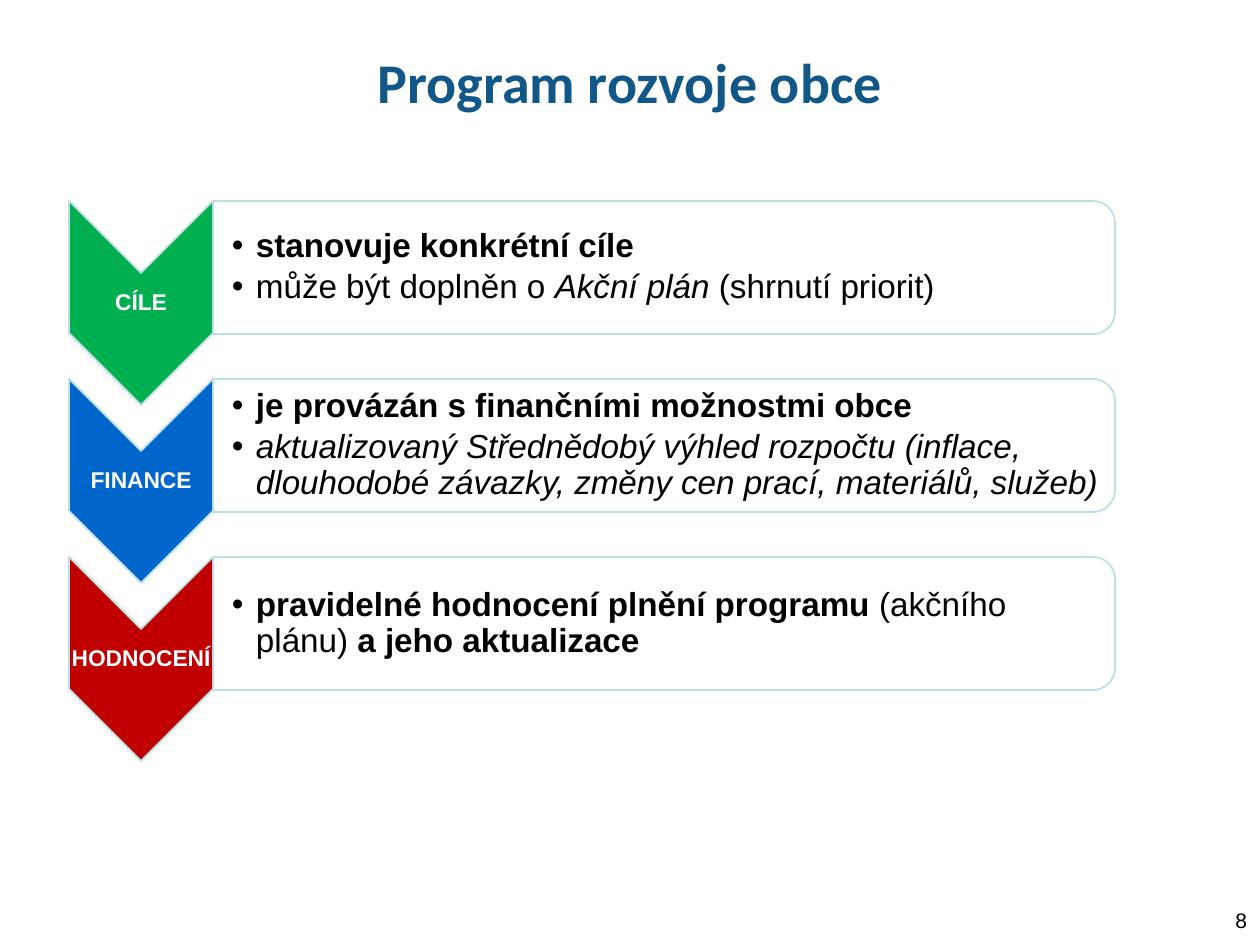
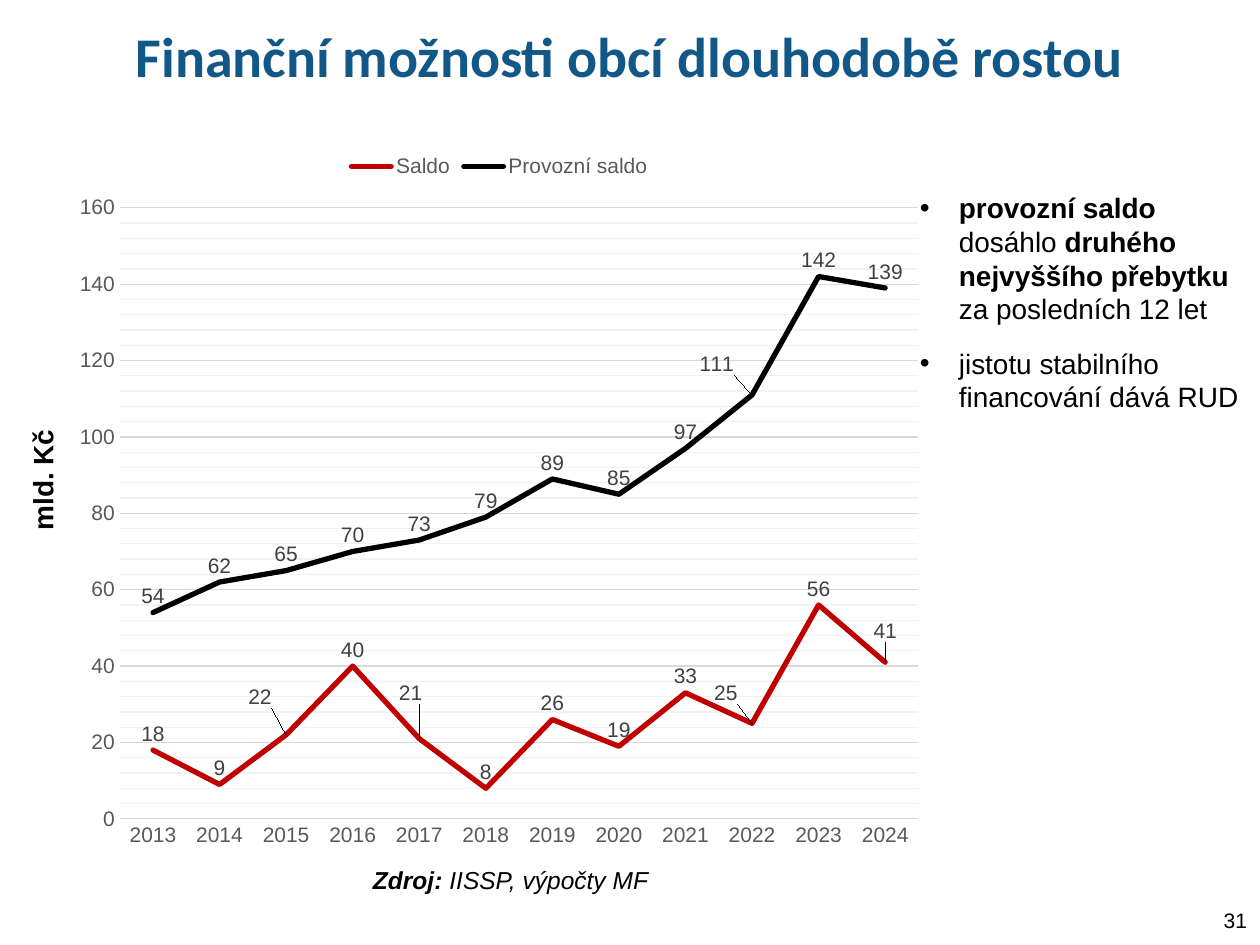
from lxml import etree
from pptx import Presentation
from pptx.chart.data import CategoryChartData
from pptx.dml.color import RGBColor
from pptx.enum.chart import XL_CHART_TYPE, XL_LABEL_POSITION, XL_LEGEND_POSITION, XL_TICK_MARK
from pptx.enum.shapes import MSO_SHAPE
from pptx.enum.text import MSO_ANCHOR, PP_ALIGN
from pptx.oxml.ns import qn
from pptx.util import Pt

EMU_PER_PX = 914400 / 126
SLIDE_WIDTH, SLIDE_HEIGHT = 1260, 945
TITLE_COLOR = "115888"
TEXT_COLOR = "000000"
WHITE = "FFFFFF"
OUTLINE = "BBE0E3"
GRID = "D9D9D9"
MINOR_GRID = "F2F2F2"
AXIS_TEXT = "595959"
LABEL_TEXT = "404040"
RED = "C00000"
BODY_FONT = "Arial"
TITLE_FONT = "Calibri"
DEFAULT_INSETS = (13, 6, 13, 6)
CHEVRON_WIDTH, CHEVRON_HEIGHT = 144, 204
ROW_HEIGHT, ROW_PITCH = 133, 178

PROGRAM_ROWS = [
    ("CÍLE", "00B050", [
        [("stanovuje konkrétní cíle", "b")],
        [("může být doplněn o ", ""), ("Akční plán ", "i"), ("(shrnutí priorit)", "")],
    ]),
    ("FINANCE", "0066CC", [
        [("je provázán s finančními možnostmi obce", "b")],
        [("aktualizovaný Střednědobý výhled rozpočtu (inflace, dlouhodobé závazky, "
          "změny cen prací, materiálů, služeb)", "i")],
    ]),
    ("HODNOCENÍ", RED, [
        [("pravidelné hodnocení plnění programu ", "b"), ("(akčního plánu) ", ""),
         ("a jeho aktualizace", "b")],
    ]),
]
BALANCE_NOTES = [
    [("provozní saldo ", "b"), ("dosáhlo ", ""), ("druhého nejvyššího přebytku", "b"),
     (" za posledních 12 let", "")],
    [("jistotu stabilního financování dává RUD", "")],
]
YEARS = [str(year) for year in range(2013, 2025)]
BALANCES = [
    ("Saldo", RED, [18, 9, 22, 40, 21, 8, 26, 19, 33, 25, 56, 41],
     {2: (-0.03, -0.03), 4: (-0.01, -0.04), 9: (-0.03, -0.02), 11: (0, -0.02)}),
    ("Provozní saldo", TEXT_COLOR, [54, 62, 65, 70, 73, 79, 89, 85, 97, 111, 142, 139],
     {9: (-0.04, -0.02)}),
]


def px(length):
    """Turn px into EMU."""
    return round(length * EMU_PER_PX)


def color(value):
    """Turn a hex string into a colour."""
    return RGBColor.from_string(value)


def set_font(font, size, value, name=BODY_FONT):
    """Set the face, size and colour of a font."""
    font.name = name
    font.size = Pt(size)
    font.color.rgb = color(value)


def add_bullet(paragraph, indent):
    """Give a paragraph a hanging round bullet."""
    properties = paragraph._p.get_or_add_pPr()
    properties.set("marL", str(px(indent)))
    properties.set("indent", str(-px(indent)))
    etree.SubElement(properties, qn("a:buFont")).set("typeface", BODY_FONT)
    etree.SubElement(properties, qn("a:buChar")).set("char", "•")


def add_text(slide, box, paragraphs, size, value=TEXT_COLOR, name=BODY_FONT,
             align=PP_ALIGN.LEFT, anchor=MSO_ANCHOR.TOP, insets=DEFAULT_INSETS,
             indent=0, spacing=1.0, after=0):
    """Add a text box whose paragraphs are lists of (text, style) runs."""
    shape = slide.shapes.add_textbox(*map(px, box))
    frame = shape.text_frame
    frame.word_wrap = True
    frame.vertical_anchor = anchor
    frame.margin_left, frame.margin_top, frame.margin_right, frame.margin_bottom = map(px, insets)
    for index, runs in enumerate(paragraphs):
        paragraph = frame.add_paragraph() if index else frame.paragraphs[0]
        if indent:
            add_bullet(paragraph, indent)
        paragraph.alignment = align
        paragraph.line_spacing = spacing
        paragraph.space_after = Pt(after)
        for text, style in runs:
            run = paragraph.add_run()
            run.text = text
            set_font(run.font, size, value, name)
            run.font.bold = "b" in style
            run.font.italic = "i" in style
    return shape


def add_slide(presentation, title, title_top, number):
    """Add a blank slide with its title and page number."""
    slide = presentation.slides.add_slide(presentation.slide_layouts[6])
    add_text(slide, (63, title_top, 1134, 110), [[(title, "b")]], 32, TITLE_COLOR, TITLE_FONT,
             PP_ALIGN.CENTER, MSO_ANCHOR.MIDDLE)
    add_text(slide, (976, 895, 284, 50), [[(str(number), "")]], 12,
             align=PP_ALIGN.RIGHT, anchor=MSO_ANCHOR.MIDDLE)
    return slide


def add_turned_shape(slide, kind, box, fill):
    """Add a preset shape turned clockwise by 90 degrees that covers the box."""
    left, top, width, height = box
    shift = (width - height) / 2
    shape = slide.shapes.add_shape(kind, px(left + shift), px(top - shift), px(height), px(width))
    shape.rotation = 90
    shape.shadow.inherit = False
    shape.fill.solid()
    shape.fill.fore_color.rgb = color(fill)
    shape.line.color.rgb = color(OUTLINE)
    shape.line.width = Pt(1)


def add_program_row(slide, left, top, width, row):
    """Add a chevron with its label and the panel of bullets beside it."""
    label, fill, bullets = row
    panel_left = left + CHEVRON_WIDTH
    panel = (panel_left, top, width - CHEVRON_WIDTH, ROW_HEIGHT)
    add_turned_shape(slide, MSO_SHAPE.CHEVRON, (left, top, CHEVRON_WIDTH, CHEVRON_HEIGHT), fill)
    add_text(slide, (left, top + 71, CHEVRON_WIDTH, 62), [[(label, "b")]], 13, WHITE,
             align=PP_ALIGN.CENTER, anchor=MSO_ANCHOR.MIDDLE, insets=(1, 1, 1, 1), spacing=0.9)
    add_turned_shape(slide, MSO_SHAPE.ROUND_2_SAME_RECTANGLE, panel, WHITE)
    add_text(slide, (panel_left, top + 7, panel[2] - 7, ROW_HEIGHT - 14), bullets, 19,
             anchor=MSO_ANCHOR.MIDDLE, insets=(19, 1, 1, 1), indent=24, spacing=0.9, after=3)


def make_layout(**values):
    """Make a manual chart layout element."""
    layout = etree.Element(qn("c:layout"))
    manual = etree.SubElement(layout, qn("c:manualLayout"))
    for tag, value in values.items():
        etree.SubElement(manual, qn(f"c:{tag}")).set("val", str(value))
    return layout


def style_series(series, value, label_offsets):
    """Style one line and its labels, moving some labels by chart fractions."""
    series.smooth = False
    series.format.line.color.rgb = color(value)
    series.format.line.width = Pt(3)
    series._element.xpath("c:spPr/a:ln")[0].set("cap", "rnd")
    labels = series.data_labels
    labels.show_value = True
    labels.position = XL_LABEL_POSITION.ABOVE
    labels.number_format = "#,##0"
    labels.number_format_is_linked = False
    set_font(labels.font, 12, LABEL_TEXT)
    for index, (shift_x, shift_y) in label_offsets.items():
        label = series.points[index].data_label
        set_font(label.font, 12, LABEL_TEXT)
        label.position = XL_LABEL_POSITION.ABOVE
        element = series._element.xpath(f'c:dLbls/c:dLbl[c:idx/@val="{index}"]')[0]
        element.insert(1, make_layout(x=shift_x, y=shift_y))


def style_minor_gridlines(axis, value):
    """Colour the minor gridlines of an axis."""
    gridlines = axis._element.xpath("c:minorGridlines")[0]
    properties = etree.SubElement(gridlines, qn("c:spPr"))
    line = etree.SubElement(properties, qn("a:ln"), w=str(Pt(0.75)))
    fill = etree.SubElement(line, qn("a:solidFill"))
    etree.SubElement(fill, qn("a:srgbClr"), val=value)


def style_axes(chart):
    """Style the year axis, the value axis and the gridlines."""
    years, values = chart.category_axis, chart.value_axis
    for axis in (years, values):
        axis.major_tick_mark = axis.minor_tick_mark = XL_TICK_MARK.NONE
        set_font(axis.tick_labels.font, 12, AXIS_TEXT)
    years.format.line.color.rgb = color(GRID)
    years.format.line.width = Pt(0.75)
    values.format.line.fill.background()
    values.minimum_scale, values.maximum_scale = 0, 160
    values.major_unit, values.minor_unit = 20, 4
    values.tick_labels.number_format = "#,##0"
    values.tick_labels.number_format_is_linked = False
    values.has_major_gridlines = values.has_minor_gridlines = True
    values.major_gridlines.format.line.color.rgb = color(GRID)
    values.major_gridlines.format.line.width = Pt(0.75)
    style_minor_gridlines(values, MINOR_GRID)


def add_balance_chart(slide, box):
    """Add the line chart of municipal balances."""
    data = CategoryChartData(number_format="#,##0")
    data.categories = YEARS
    for name, _, values, _ in BALANCES:
        data.add_series(name, values)
    chart = slide.shapes.add_chart(XL_CHART_TYPE.LINE, *map(px, box), data).chart
    set_font(chart.font, 10, TEXT_COLOR)
    chart.has_title = False
    chart.has_legend = True
    chart.legend.position = XL_LEGEND_POSITION.TOP
    chart.legend.include_in_layout = False
    set_font(chart.legend.font, 12, AXIS_TEXT)
    plot = chart.plots[0]
    plot.vary_by_categories = False
    for series, (_, value, _, label_offsets) in zip(plot.series, BALANCES):
        style_series(series, value, label_offsets)
    style_axes(chart)
    area = chart._chartSpace.xpath("c:chart/c:plotArea")[0]
    for layout in area.findall(qn("c:layout")):
        area.remove(layout)
    area.insert(0, make_layout(layoutTarget="inner", xMode="edge", yMode="edge",
                               x=0.065, y=0.093, w=0.915, h=0.85))


def build_program_slide(presentation):
    """Build the slide on the development programme."""
    slide = add_slide(presentation, "Program rozvoje obce", 26, 8)
    for index, row in enumerate(PROGRAM_ROWS):
        add_program_row(slide, 69, 201 + index * ROW_PITCH, 1046, row)


def build_balance_slide(presentation):
    """Build the slide on growing municipal finances."""
    slide = add_slide(presentation, "Finanční možnosti obcí dlouhodobě rostou", 0, 31)
    unit = add_text(slide, (-37, 440, 160, 47), [[("mld. Kč", "b")]], 16)
    unit.rotation = 270
    add_text(slide, (907, 185, 353, 237), BALANCE_NOTES, 16, indent=39, after=12)
    add_text(slide, (360, 859, 334, 43), [[("Zdroj: ", "bi"), ("IISSP, výpočty MF", "i")]], 14)
    add_balance_chart(slide, (63, 141, 873, 719))


def main():
    """Build and save the presentation."""
    presentation = Presentation()
    presentation.slide_width = px(SLIDE_WIDTH)
    presentation.slide_height = px(SLIDE_HEIGHT)
    build_program_slide(presentation)
    build_balance_slide(presentation)
    presentation.save("out.pptx")


if __name__ == "__main__":
    main()
